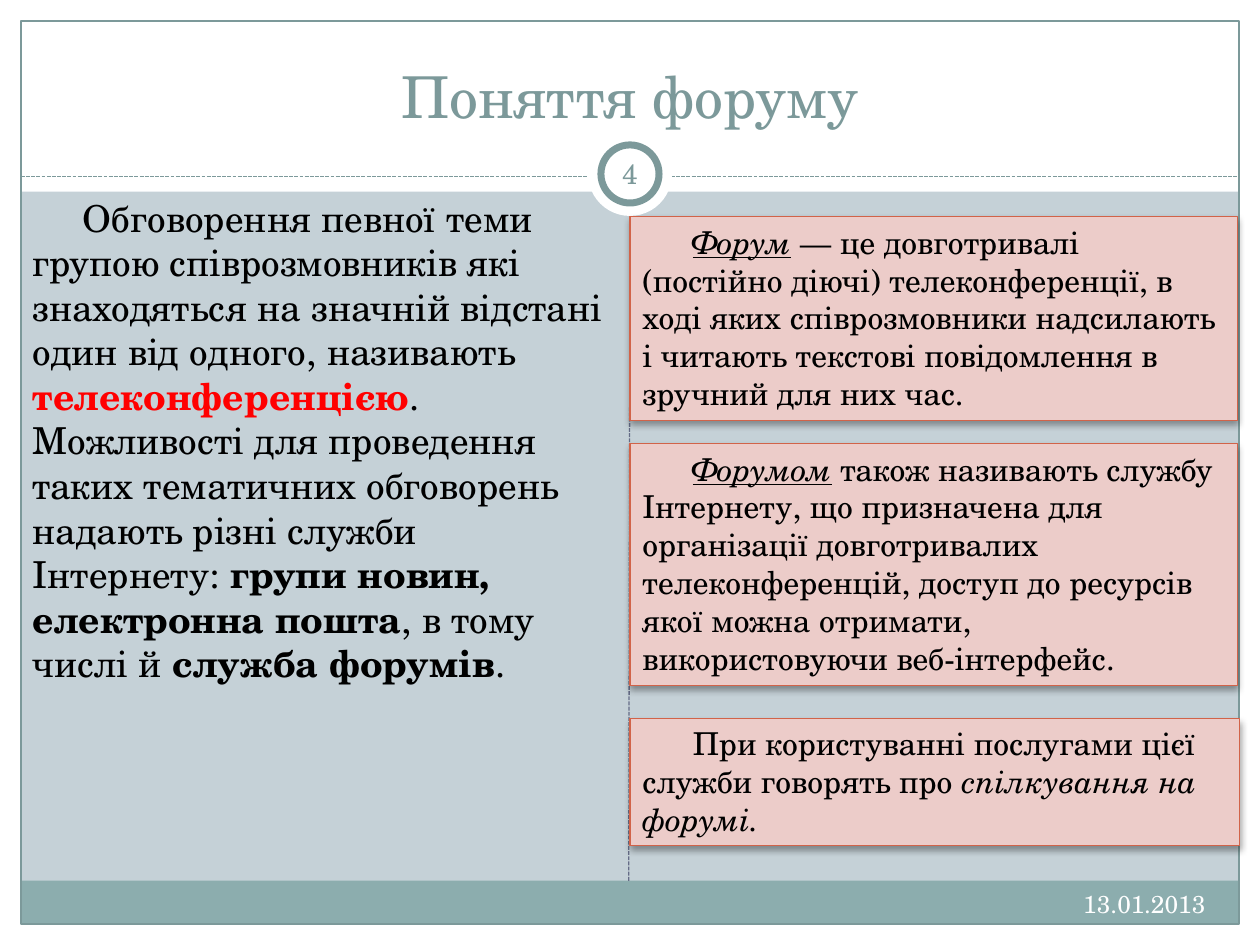
import pptx
import pptx.util
import pptx.dml.color
import pptx.enum.dml
import pptx.enum.shapes
import pptx.enum.text
import pptx.oxml
import pptx.oxml.ns
from dataclasses import dataclass

Pt = pptx.util.Pt
SHAPE = pptx.enum.shapes.MSO_SHAPE
ALIGN = pptx.enum.text.PP_ALIGN
ANCHOR = pptx.enum.text.MSO_ANCHOR
FIT = pptx.enum.text.MSO_AUTO_SIZE


@dataclass(frozen=True)
class Theme:
    font: str = "TeX Gyre Schola"
    back: str = "C5D1D7"
    white: str = "FFFFFF"
    black: str = "000000"
    red: str = "FF0000"
    teal: str = "7C999A"
    footer: str = "8CADAE"
    divider: str = "646B86"
    card: str = "ECCCC9"
    card_edge: str = "D16349"
    title_size: float = 33
    body_size: float = 21.2
    card_size: float = 18
    number_size: float = 16
    date_size: float = 14
    hairline: float = 0.75
    indent: float = 28.8


def rgb(value):
    return pptx.dml.color.RGBColor.from_string(value)


class Deck:
    def __init__(self, prs, theme):
        self.t = theme
        self.s = prs.slides.add_slide(prs.slide_layouts[6])
        fill = self.s.background.fill
        fill.solid()
        fill.fore_color.rgb = rgb(theme.back)

    def shape(self, x, y, w, h, fill=None, line=None, width=None, kind=SHAPE.RECTANGLE):
        sp = self.s.shapes.add_shape(kind, Pt(x), Pt(y), Pt(w), Pt(h))
        sp.shadow.inherit = False
        if fill:
            sp.fill.solid()
            sp.fill.fore_color.rgb = rgb(fill)
        else:
            sp.fill.background()
        if line:
            sp.line.color.rgb = rgb(line)
            sp.line.width = Pt(width or self.t.hairline)
        else:
            sp.line.fill.background()
        return sp

    def dashed(self, x1, y1, x2, y2, color):
        ln = self.s.shapes.add_connector(
            pptx.enum.shapes.MSO_CONNECTOR.STRAIGHT, Pt(x1), Pt(y1), Pt(x2), Pt(y2))
        ln.line.color.rgb = rgb(color)
        ln.line.width = Pt(self.t.hairline)
        ln.line.dash_style = pptx.enum.dml.MSO_LINE.SQUARE_DOT
        ln._element.spPr.append(pptx.oxml.parse_xml(
            f"<a:effectLst {pptx.oxml.ns.nsdecls('a')}/>"))

    def add_runs(self, sp, runs, size, color, align=ALIGN.LEFT, anchor=ANCHOR.TOP,
                 indent=0, before=0):
        """Each run is (text, marks): b bold, i italic, u underlined, r red."""
        tf = sp.text_frame
        tf.word_wrap = True
        tf.vertical_anchor = anchor
        p = tf.paragraphs[0]
        p.alignment = align
        p.space_before = Pt(before)
        if indent:
            p._p.get_or_add_pPr().set("indent", str(int(Pt(indent))))
        for text, marks in runs:
            r = p.add_run()
            r.text = text
            f = r.font
            f.name, f.size = self.t.font, Pt(size)
            f.color.rgb = rgb(self.t.red if "r" in marks else color)
            f.bold, f.italic, f.underline = (m in marks for m in "biu")
        return tf

    def text(self, x, y, w, h, runs, size, color, **layout):
        sp = self.s.shapes.add_textbox(Pt(x), Pt(y), Pt(w), Pt(h))
        return self.add_runs(sp, runs, size, color, **layout)

    def card(self, x, y, w, h, runs):
        sp = self.shape(x, y, w, h, self.t.card, self.t.card_edge)
        tf = self.add_runs(sp, runs, self.t.card_size, self.t.black, indent=self.t.indent)
        tf.auto_size = FIT.SHAPE_TO_FIT_TEXT
        effects = sp._element.spPr.find(pptx.oxml.ns.qn("a:effectLst"))
        effects.append(pptx.oxml.parse_xml(
            f'<a:outerShdw {pptx.oxml.ns.nsdecls("a")} blurRad="{int(Pt(4))}" '
            f'dist="{int(Pt(2))}" dir="5400000" rotWithShape="0">'
            f'<a:srgbClr val="{self.t.black}"><a:alpha val="35000"/></a:srgbClr>'
            '</a:outerShdw>'))


def main():
    prs = pptx.Presentation()
    W, H = 720, 540
    prs.slide_width, prs.slide_height = Pt(W), Pt(H)
    t = Theme()
    d = Deck(prs, t)
    edge, mid = 12, W / 2
    inner = W - 2 * edge

    # White margins and header
    for box in ((0, H - edge, W, edge), (0, 0, W, 109.5),
                (0, 0, edge, H), (W - edge, 0, edge, H)):
        d.shape(*box, fill=t.white)

    # Footer band, frame and header rule
    d.shape(edge, 503.3, inner, 24.5, t.footer)
    d.shape(edge, edge, inner, H - 2 * edge, line=t.teal)
    d.dashed(edge, 100.8, W - edge, 100.8, t.teal)

    # Number badge: two concentric circles
    for size, line in ((48, None), (33.2, t.teal)):
        d.shape(mid - size / 2, 99.4 - size / 2, size, size, t.white, line, 4,
                SHAPE.OVAL)

    # Column divider
    d.dashed(359.3, 503.3, mid, 123.8, t.divider)

    # Title, date and slide number
    d.text(24, 18, 672, 60, [("Поняття форуму", "")], t.title_size, t.teal,
           align=ALIGN.CENTER, anchor=ANCHOR.BOTTOM)
    d.text(456, 504.7, 240, 28.8, [("13.01.2013", "")], t.date_size, t.white,
           align=ALIGN.RIGHT)
    tf = d.text(342, 82, 36, 34.6, [("4", "")], t.number_size, t.teal,
                align=ALIGN.CENTER, anchor=ANCHOR.MIDDLE)
    tf.margin_left = tf.margin_right = Pt(3.6)

    # Left column
    d.text(11.5, 108, 343.5, 263.5, [
        ("Обговорення певної теми групою співрозмовників які знаходяться на "
         "значній відстані один від одного, називають ", ""),
        ("телеконференцією", "br"),
        (". Можливості для проведення таких тематичних обговорень надають "
         "різні служби Інтернету: ", ""),
        ("групи новин, електронна пошта", "b"),
        (", в тому числі й ", ""),
        ("служба форумів", "b"),
        (".", ""),
    ], t.body_size, t.black, indent=t.indent, before=4.2)

    # Definition cards
    cards = [
        (123.8, 347, 116.6, [
            ("Форум", "iu"),
            (" — це довготривалі (постійно діючі) телеконференції, в ході яких "
             "співрозмовники надсилають і читають текстові повідомлення в "
             "зручний для них час.", "")]),
        (253.4, 347, 138.2, [
            ("Форумом", "iu"),
            (" також називають службу Інтернету, що призначена для організації "
             "довготривалих телеконференцій, доступ до ресурсів якої можна "
             "отримати, використовуючи веб-інтерфейс.", "")]),
        (410.4, 348.5, 72.7, [
            ("При користуванні послугами цієї служби говорять про ", ""),
            ("спілкування на форумі.", "i")]),
    ]
    for top, width, height, runs in cards:
        d.card(mid, top, width, height, runs)

    prs.save("out.pptx")


if __name__ == "__main__":
    main()
